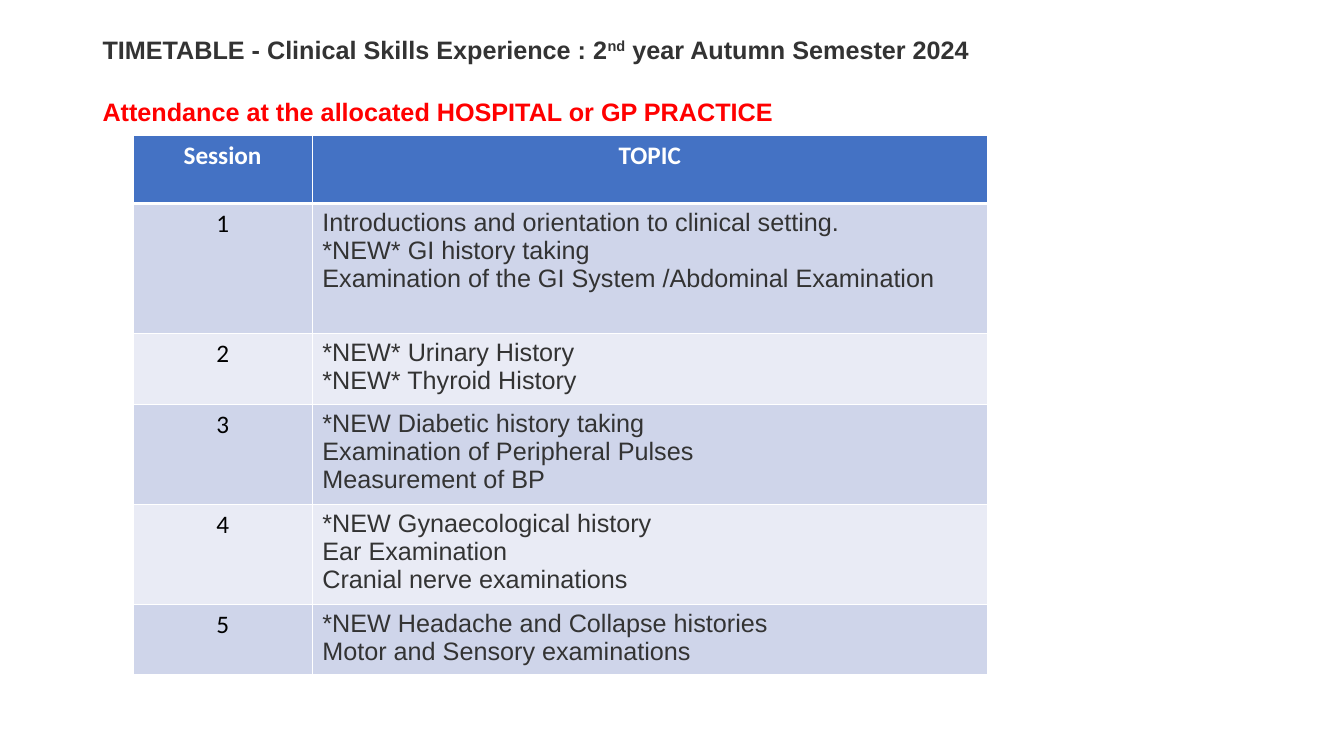
from lxml.etree import SubElement
from pptx import Presentation
from pptx.dml.color import RGBColor
from pptx.enum.text import MSO_ANCHOR, MSO_AUTO_SIZE, PP_ALIGN
from pptx.oxml.ns import qn
from pptx.util import Cm, Pt

COLOURS = {
    "heading": "333333",
    "attendance": "FF0000",
    "header": "4472C4",
    "odd": "CFD5EA",
    "even": "E9EBF5",
    "white": "FFFFFF",
    "black": "000000",
}

SESSIONS = [
    (3.28, ["Introductions and orientation to clinical setting.",
            "*NEW* GI history taking",
            "Examination of the GI System /Abdominal Examination"]),
    (1.78, ["*NEW* Urinary History",
            "*NEW* Thyroid History"]),
    (2.52, ["*NEW Diabetic history taking",
            "Examination of Peripheral Pulses",
            "Measurement of BP"]),
    (2.52, ["*NEW Gynaecological history",
            "Ear Examination",
            "Cranial nerve examinations"]),
    (1.78, ["*NEW Headache and Collapse histories",
            "Motor and Sensory examinations"]),
]
HEADER_HEIGHT = 1.72
COLUMN_SHARES = [0.21, 0.79]


def style(paragraph, face, colour, bold=False, align=PP_ALIGN.LEFT):
    paragraph.alignment = align
    font = paragraph.font
    font.name, font.size, font.bold = face, Pt(18), bold
    font.color.rgb = RGBColor.from_string(COLOURS[colour])


def add_heading(slide, left, top, width, height):
    title = slide.shapes.title
    title.left, title.top, title.width, title.height = map(Cm, (left, top, width, height))
    frame = title.text_frame
    frame.word_wrap = True
    frame.auto_size = MSO_AUTO_SIZE.NONE
    frame.vertical_anchor = MSO_ANCHOR.TOP
    frame.margin_top = 0

    timetable = frame.paragraphs[0]
    timetable.add_run().text = "TIMETABLE - Clinical Skills Experience : 2"
    ordinal = timetable.add_run()
    ordinal.text = "nd"
    ordinal._r.get_or_add_rPr().set("baseline", "30000")
    timetable.add_run().text = " year Autumn Semester 2024"

    attendance = frame.add_paragraph()
    attendance.text = "Attendance at the allocated HOSPITAL or GP PRACTICE"
    for paragraph, colour, gap in ((timetable, "heading", 0), (attendance, "attendance", 25)):
        style(paragraph, "Arial", colour, bold=True)
        paragraph.line_spacing = 0.9
        paragraph.space_before = Pt(gap)


def add_borders(cell, top, bottom):
    properties = cell._tc.get_or_add_tcPr()
    for side, points in (("L", 1), ("R", 1), ("T", top), ("B", bottom)):
        line = SubElement(properties, qn(f"a:ln{side}"), w=str(Pt(points)))
        SubElement(SubElement(line, qn("a:solidFill")), qn("a:srgbClr"), val=COLOURS["white"])


def fill_cell(cell, lines, fill, **text_style):
    cell.fill.solid()
    cell.fill.fore_color.rgb = RGBColor.from_string(COLOURS[fill])
    cell.text = "\n".join(lines)
    for paragraph in cell.text_frame.paragraphs:
        style(paragraph, **text_style)


def add_timetable(slide, left, top, width):
    heights = [HEADER_HEIGHT] + [height for height, _ in SESSIONS]
    timetable = slide.shapes.add_table(
        len(heights), len(COLUMN_SHARES), Cm(left), Cm(top), Cm(width), Cm(sum(heights))).table
    for column, share in zip(timetable.columns, COLUMN_SHARES):
        column.width = Cm(width * share)
    for number, height in enumerate(heights):
        timetable.rows[number].height = Cm(height)
        for cell in timetable.rows[number].cells:
            add_borders(cell, top=3 if number == 1 else 1, bottom=3 if number == 0 else 1)

    for column, label in enumerate(["Session", "TOPIC"]):
        fill_cell(timetable.cell(0, column), [label], "header",
                  face="Calibri", colour="white", bold=True, align=PP_ALIGN.CENTER)
    for number, (_, topics) in enumerate(SESSIONS, 1):
        band = "odd" if number % 2 else "even"
        fill_cell(timetable.cell(number, 0), [str(number)], band,
                  face="Calibri", colour="black", align=PP_ALIGN.CENTER)
        fill_cell(timetable.cell(number, 1), topics, band,
                  face="Arial", colour="heading",
                  align=PP_ALIGN.LEFT if number == 1 else PP_ALIGN.JUSTIFY)


def main():
    deck = Presentation()
    deck.slide_width, deck.slide_height = Cm(33.87), Cm(19.05)
    slide = deck.slides.add_slide(deck.slide_layouts[5])
    add_heading(slide, 2.33, 0.94, 29.21, 3.68)
    add_timetable(slide, 3.35, 3.41, 21.53)
    deck.save("out.pptx")


if __name__ == "__main__":
    main()
